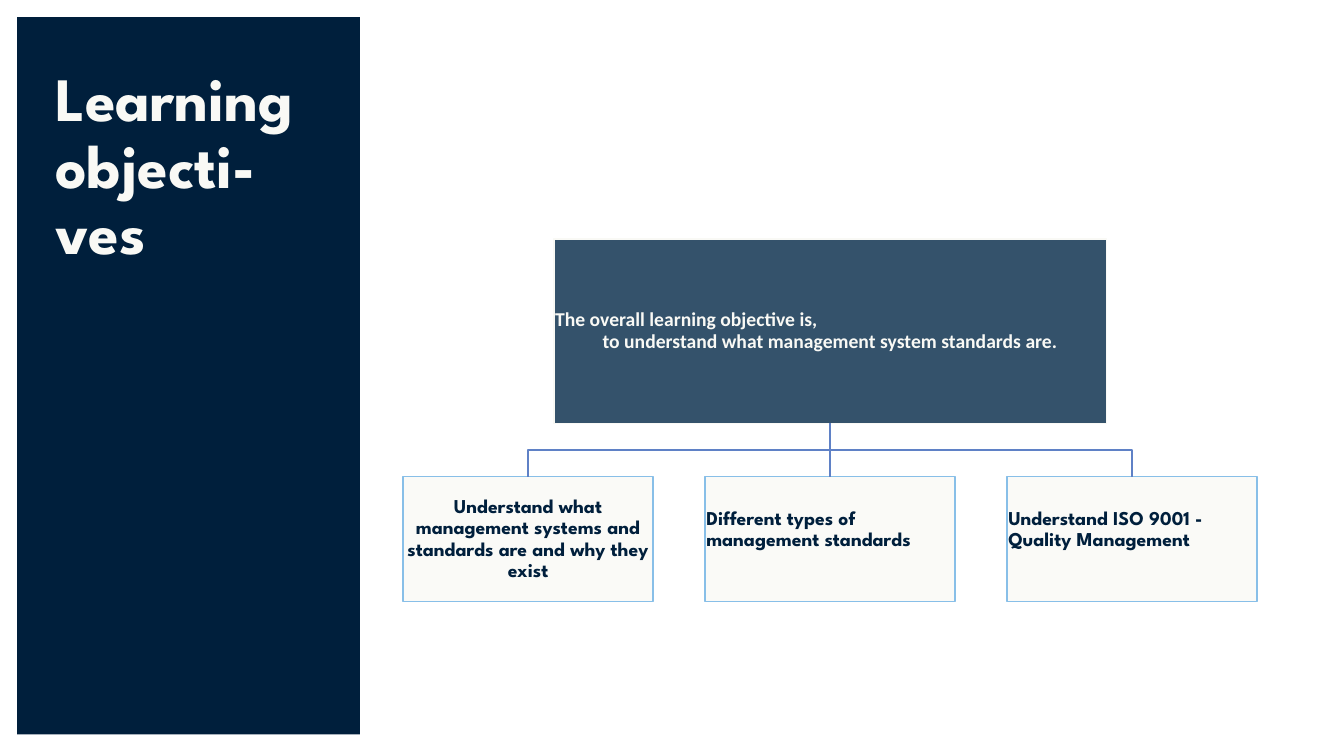
import pptx
import pptx.dml.color
import pptx.enum.shapes
import pptx.enum.text
import pptx.oxml
import pptx.oxml.ns
import pptx.util
from dataclasses import dataclass

Cm = pptx.util.Cm
Pt = pptx.util.Pt
LEFT = pptx.enum.text.PP_ALIGN.LEFT
CENTER = pptx.enum.text.PP_ALIGN.CENTER


@dataclass(frozen=True)
class Theme:
    navy: str = "001F3C"
    slate: str = "022747"
    cream: str = "F9F9F5"
    sky: str = "88BFE8"
    connector: str = "5F81C6"
    heading_font: str = "League Spartan"
    body_font: str = "Calibri"
    title_size: int = 44
    body_size: int = 14


THEME = Theme()


def rgb(value):
    return pptx.dml.color.RGBColor.from_string(value)


def style_line(line, color):
    line.color.rgb = rgb(color)
    line.width = Pt(1)


def set_opacity(shape, percent):
    color = shape.fill._xPr.find(".//" + pptx.oxml.ns.qn("a:srgbClr"))
    alpha = pptx.oxml.parse_xml(
        f'<a:alpha {pptx.oxml.ns.nsdecls("a")} val="{percent * 1000}"/>')
    color.append(alpha)


def add_rectangle(slide, left, top, width, height, fill, outline=None, opacity=100):
    shape = slide.shapes.add_shape(
        pptx.enum.shapes.MSO_SHAPE.RECTANGLE, Cm(left), Cm(top), Cm(width), Cm(height))
    shape.shadow.inherit = False
    shape.fill.solid()
    shape.fill.fore_color.rgb = rgb(fill)
    if opacity < 100:
        set_opacity(shape, opacity)
    if outline:
        style_line(shape.line, outline)
    else:
        shape.line.fill.background()
    return shape


def write_paragraph(paragraph, lines, alignment, font, size, color):
    paragraph.alignment = alignment
    paragraph.line_spacing = 0.9
    for index, text in enumerate(lines):
        if index:
            paragraph.add_line_break()
        run = paragraph.add_run()
        run.text = text
        run.font.name = font
        run.font.size = Pt(size)
        run.font.bold = True
        run.font.color.rgb = rgb(color)


def fill_box(shape, paragraphs, font, color, bottom_inset=0.03):
    frame = shape.text_frame
    frame.word_wrap = True
    frame.vertical_anchor = pptx.enum.text.MSO_ANCHOR.MIDDLE
    frame.margin_left = frame.margin_right = frame.margin_top = Cm(0.03)
    frame.margin_bottom = Cm(bottom_inset)
    for index, (text, alignment) in enumerate(paragraphs):
        paragraph = frame.add_paragraph() if index else frame.paragraphs[0]
        write_paragraph(paragraph, [text], alignment, font, THEME.body_size, color)


def add_title(slide, lines):
    box = slide.shapes.add_textbox(Cm(1.14), Cm(1.6), Cm(7.42), Cm(5.2))
    box.text_frame.word_wrap = True
    write_paragraph(box.text_frame.paragraphs[0], lines, LEFT,
                    THEME.heading_font, THEME.title_size, THEME.cream)


def add_straight_branch(slide, parent, child):
    connector = slide.shapes.add_connector(
        pptx.enum.shapes.MSO_CONNECTOR.STRAIGHT, 0, 0, 0, 0)
    connector.begin_connect(parent, 2)
    connector.end_connect(child, 0)
    style_line(connector.line, THEME.connector)
    connector._element.spPr.append(pptx.oxml.parse_xml(
        f'<a:effectLst {pptx.oxml.ns.nsdecls("a")}/>'))


def add_bent_branch(slide, parent, child):
    start_x = parent.left + parent.width // 2
    start_y = parent.top + parent.height
    end_x = child.left + child.width // 2
    middle_y = (start_y + child.top) // 2
    builder = slide.shapes.build_freeform(start_x, start_y)
    builder.add_line_segments(
        [(start_x, middle_y), (end_x, middle_y), (end_x, child.top)], close=False)
    branch = builder.convert_to_shape()
    branch.shadow.inherit = False
    branch.fill.background()
    style_line(branch.line, THEME.connector)


def add_objective(slide, left, text, alignment, bottom_inset):
    box = add_rectangle(slide, left, 12.01, 6.3, 3.15, THEME.cream, THEME.sky, 70)
    fill_box(box, [(text, alignment)], THEME.heading_font, THEME.navy, bottom_inset)
    return box


def main():
    presentation = pptx.Presentation()
    presentation.slide_width = Cm(33.87)
    presentation.slide_height = Cm(19.05)
    slide = presentation.slides.add_slide(presentation.slide_layouts[6])

    add_rectangle(slide, 0.43, 0.43, 8.64, 18.08, THEME.navy)
    add_title(slide, ["Learning objecti-", "ves"])

    overall = add_rectangle(slide, 13.96, 6.02, 13.92, 4.65,
                            THEME.slate, THEME.cream, 80)
    fill_box(overall, [
        ("The overall learning objective is,", LEFT),
        ("to understand what management system standards are.", CENTER),
    ], THEME.body_font, THEME.cream)

    objectives = [
        ("Understand what management systems and standards are and why they exist",
         CENTER, 0.03),
        ("Different types of management standards", LEFT, 0.5),
        ("Understand ISO 9001 - Quality Management", LEFT, 0.5),
    ]
    boxes = [add_objective(slide, 10.16 + 7.61 * index, *objective)
             for index, objective in enumerate(objectives)]

    first, middle, last = boxes
    add_bent_branch(slide, overall, first)
    add_straight_branch(slide, overall, middle)
    add_bent_branch(slide, overall, last)

    presentation.save("out.pptx")


if __name__ == "__main__":
    main()
